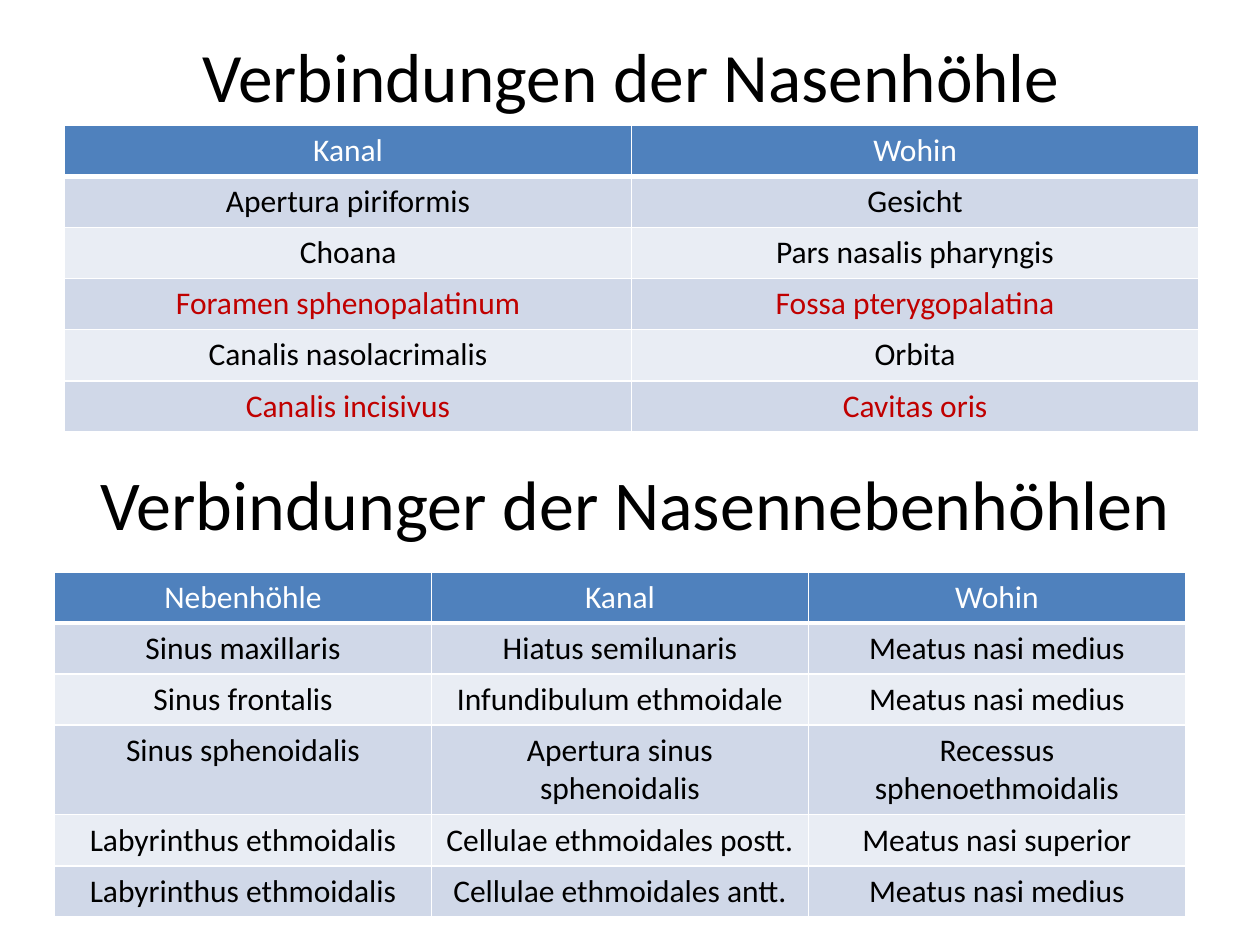
import pptx
import pptx.util
import pptx.dml.color
import pptx.enum.text
import pptx.oxml
import pptx.oxml.ns
from pptx.util import Pt

RGBColor = pptx.dml.color.RGBColor
BLACK = RGBColor(0x00, 0x00, 0x00)
WHITE = RGBColor(0xFF, 0xFF, 0xFF)
RED = RGBColor(0xC0, 0x00, 0x00)
HEADER_BLUE = RGBColor(0x4F, 0x81, 0xBD)
BANDS = (RGBColor(0xE9, 0xED, 0xF4), RGBColor(0xD0, 0xD8, 0xE8))

ROW_HEIGHT = 29.2
TWO_LINE_HEIGHT = 50.9

NASAL_CAVITY = [
    ("Kanal", "Wohin"),
    ("Apertura piriformis", "Gesicht"),
    ("Choana", "Pars nasalis pharyngis"),
    ("Foramen sphenopalatinum", "Fossa pterygopalatina"),
    ("Canalis nasolacrimalis", "Orbita"),
    ("Canalis incisivus", "Cavitas oris"),
]
SINUSES = [
    ("Nebenhöhle", "Kanal", "Wohin"),
    ("Sinus maxillaris", "Hiatus semilunaris", "Meatus nasi medius"),
    ("Sinus frontalis", "Infundibulum ethmoidale", "Meatus nasi medius"),
    ("Sinus sphenoidalis", "Apertura sinus sphenoidalis", "Recessus sphenoethmoidalis"),
    ("Labyrinthus ethmoidalis", "Cellulae ethmoidales postt.", "Meatus nasi superior"),
    ("Labyrinthus ethmoidalis", "Cellulae ethmoidales antt.", "Meatus nasi medius"),
]


class SlideBuilder:
    font_name = "Calibri"
    table_size = 18

    def __init__(self, slide):
        self.slide = slide

    def centred_text(self, frame, text, size, color):
        para = frame.paragraphs[0]
        para.alignment = pptx.enum.text.PP_ALIGN.CENTER
        span = para.add_run()
        span.text = text
        for name, value in {"name": self.font_name, "size": Pt(size), "bold": False}.items():
            setattr(span.font, name, value)
        span.font.color.rgb = color

    def heading(self, text, left, top, width, height, size):
        box = self.slide.shapes.add_textbox(Pt(left), Pt(top), Pt(width), Pt(height))
        frame_format = {
            "word_wrap": True,
            "auto_size": pptx.enum.text.MSO_AUTO_SIZE.NONE,
            "vertical_anchor": pptx.enum.text.MSO_ANCHOR.MIDDLE,
        }
        for name, value in frame_format.items():
            setattr(box.text_frame, name, value)
        self.centred_text(box.text_frame, text, size, BLACK)

    def borders(self, cell, bottom):
        """Put white lines around a cell, ahead of its fill as the schema asks."""
        properties = cell._tc.get_or_add_tcPr()
        widths = {"lnL": 1, "lnR": 1, "lnT": 1, "lnB": bottom}
        for position, (tag, width) in enumerate(widths.items()):
            line = pptx.oxml.parse_xml(
                f'<a:{tag} {pptx.oxml.ns.nsdecls("a")} w="{Pt(width)}">'
                f'<a:solidFill><a:srgbClr val="{WHITE}"/></a:solidFill></a:{tag}>'
            )
            properties.insert(position, line)

    def table(self, rows, left, top, width, red_rows=(), two_line_rows=()):
        heights = [TWO_LINE_HEIGHT if i in two_line_rows else ROW_HEIGHT for i in range(len(rows))]
        columns = len(rows[0])
        table = self.slide.shapes.add_table(
            len(rows), columns, Pt(left), Pt(top), Pt(width), Pt(sum(heights))
        ).table
        for column in table.columns:
            column.width = Pt(width / columns)
        for i, texts in enumerate(rows):
            header = i == 0
            table.rows[i].height = Pt(heights[i])
            color = WHITE if header else RED if i in red_rows else BLACK
            for j, text in enumerate(texts):
                cell = table.cell(i, j)
                cell.fill.solid()
                cell.fill.fore_color.rgb = HEADER_BLUE if header else BANDS[i % 2]
                self.borders(cell, bottom=3 if header else 1)
                self.centred_text(cell.text_frame, text, self.table_size, color)


def main():
    deck = pptx.Presentation()
    deck.slide_width, deck.slide_height = Pt(720), Pt(540)
    builder = SlideBuilder(deck.slides.add_slide(deck.slide_layouts[6]))

    builder.heading("Verbindungen der Nasenhöhle", 36.7, 15.1, 648, 55.4, 39.6)
    builder.table(NASAL_CAVITY, 36.9, 71.6, 648, red_rows=(3, 5))
    builder.heading("Verbindunger der Nasennebenhöhlen", 38.9, 258.5, 648, 56.9, 40)
    builder.table(SINUSES, 31.2, 326.8, 646.2, two_line_rows=(3,))

    deck.save("out.pptx")


if __name__ == "__main__":
    main()
